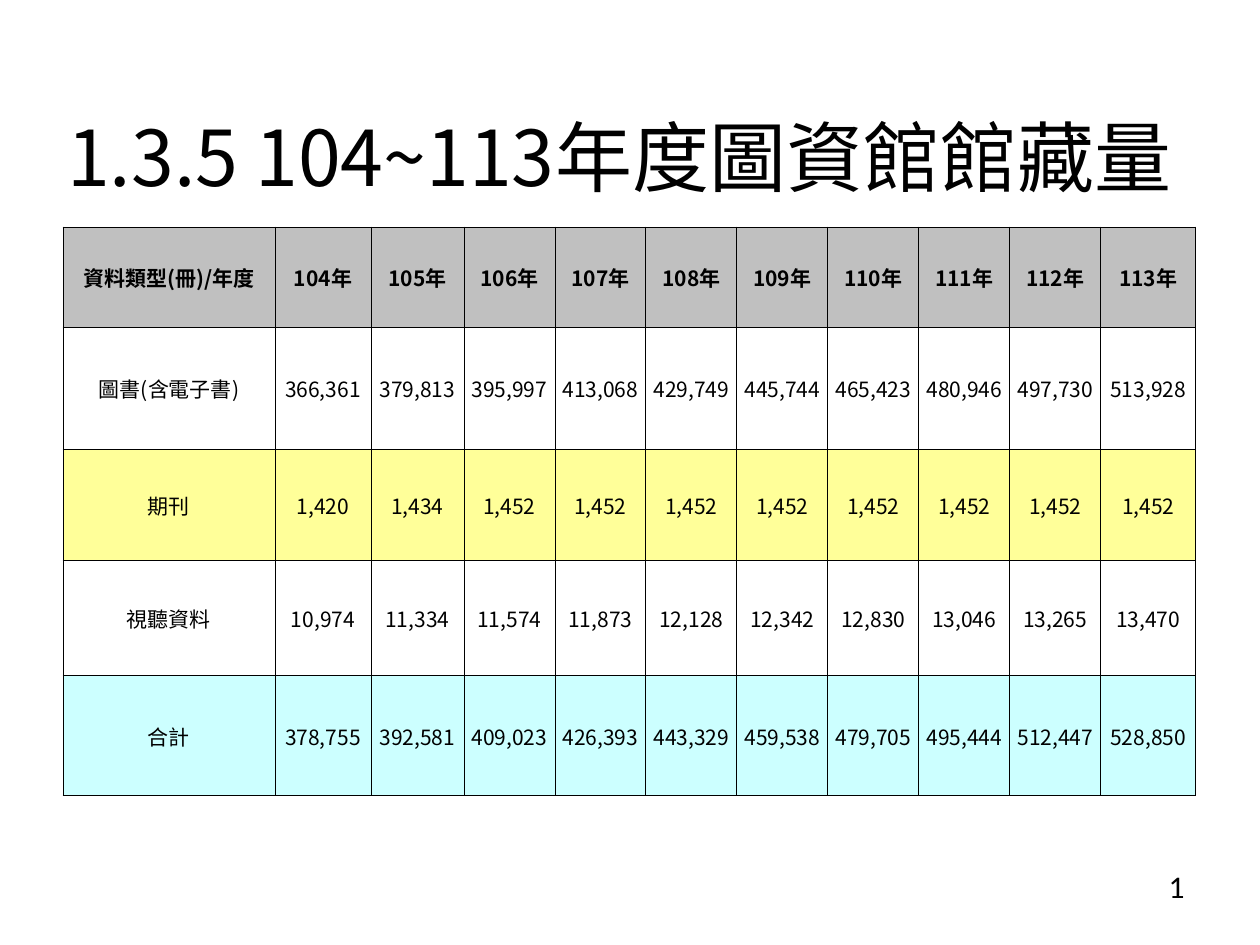
from lxml.etree import SubElement
from pptx import Presentation
from pptx.dml.color import RGBColor
from pptx.enum.text import MSO_ANCHOR as Anchor, PP_ALIGN as Align
from pptx.oxml.ns import qn
from pptx.util import Pt

# Content
TITLE = "1.3.5 104~113年度圖資館館藏量"
PAGE = "1"
YEARS = range(104, 114)
HOLDINGS = {
    "圖書(含電子書)": [366361, 379813, 395997, 413068, 429749,
                 445744, 465423, 480946, 497730, 513928],
    "期刊": [1420, 1434] + [1452] * 8,
    "視聽資料": [10974, 11334, 11574, 11873, 12128,
             12342, 12830, 13046, 13265, 13470],
}
TOTALS = [sum(year) for year in zip(*HOLDINGS.values())]

# Style
COLORS = {"text": "000000", "header": "C0C0C0", "journals": "FFFF99", "total": "CCFFFF"}
ROW_FILLS = ["header", None, "journals", None, "total"]
CJK, LATIN = "Noto Sans CJK SC", "Calibri"

# Layout in px
PX = 914400 // 126
TITLE_BOX = (34, 107, 1171, 98)
PAGE_BOX = (903, 861, 294, 65)
TABLE_AT = (63, 227)
COL_W = [212, 96, 93] + [91] * 7 + [95]
ROW_H = [100, 122, 111, 115, 121]


def px(*values):
    return [v * PX for v in values]


def rgb(name):
    return RGBColor.from_string(COLORS[name])


def write(tf, text, size, font, align, bold=False):
    tf.text = text
    p = tf.paragraphs[0]
    p.alignment = align
    r = p.runs[0]
    r.font.size, r.font.name, r.font.bold = Pt(size), font, bold
    r.font.color.rgb = rgb("text")
    if font == CJK:
        SubElement(r.font._element, qn("a:ea"), typeface=font)


def add_borders(cell):
    """Thin lines on all four sides; they must precede the fill."""
    tc_pr = cell._tc.get_or_add_tcPr()
    for side in ("lnL", "lnR", "lnT", "lnB"):
        ln = SubElement(tc_pr, qn(f"a:{side}"), w=str(Pt(0.5)))
        fill = SubElement(ln, qn("a:solidFill"))
        SubElement(fill, qn("a:srgbClr"), val=COLORS["text"])


prs = Presentation()
prs.slide_width, prs.slide_height = px(1260, 945)
s = prs.slides.add_slide(prs.slide_layouts[5])

# Page number
sp = s.shapes.add_textbox(*px(*PAGE_BOX))
sp.text_frame.word_wrap = True
write(sp.text_frame, PAGE, 18, LATIN, Align.RIGHT)

# Title
title = s.shapes.title
title.left, title.top, title.width, title.height = px(*TITLE_BOX)
title.text_frame.vertical_anchor = Anchor.MIDDLE
write(title.text_frame, TITLE, 44, CJK, Align.CENTER)

# Holdings table
rows = [["資料類型(冊)/年度"] + [f"{y}年" for y in YEARS]]
for label, counts in [*HOLDINGS.items(), ("合計", TOTALS)]:
    rows.append([label] + [f"{n:,}" for n in counts])

table = s.shapes.add_table(len(ROW_H), len(COL_W),
                           *px(*TABLE_AT, sum(COL_W), sum(ROW_H))).table
for col, w in zip(table.columns, COL_W):
    col.width = w * PX
for row, h in zip(table.rows, ROW_H):
    row.height = h * PX

for i, (row, fill) in enumerate(zip(rows, ROW_FILLS)):
    for j, text in enumerate(row):
        cell = table.cell(i, j)
        cell.margin_left = cell.margin_right = cell.margin_top = PX
        cell.margin_bottom = 0
        cell.vertical_anchor = Anchor.MIDDLE
        add_borders(cell)
        if fill:
            cell.fill.solid()
            cell.fill.fore_color.rgb = rgb(fill)
        else:
            cell.fill.background()
        write(cell.text_frame, text, 12, CJK, Align.CENTER, bold=i == 0)

prs.save("out.pptx")
